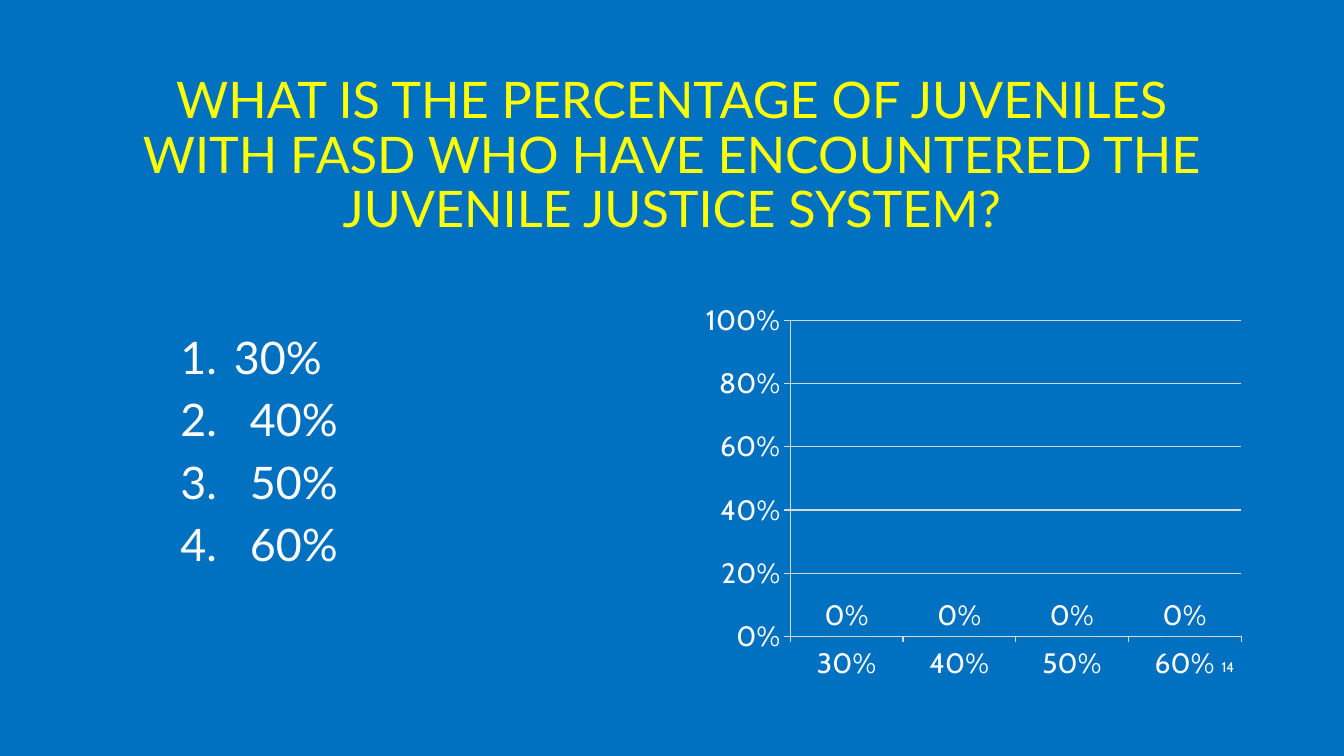
from dataclasses import dataclass

from lxml import etree
from pptx import Presentation
from pptx import util as u
from pptx.chart import data as cd
from pptx.dml import color
from pptx.enum import chart as ch, text
from pptx.oxml import ns

COLORS = {"background": "0070C0", "title": "FFFF00", "body": "FFFFFF",
          "bar": "9AC43E", "line": "D9D9D9"}
NUMBER_LEFT = 0.31


@dataclass
class Box:
    left: float
    top: float
    width: float
    height: float

    def lengths(self) -> list:
        return [u.Inches(v) for v in (self.left, self.top, self.width, self.height)]


@dataclass
class Style:
    size: int
    font: str
    color: str


@dataclass
class Answer:
    label: str
    margin: float
    number_font: str


TITLE = Style(36, "Lato", "title")
ANSWER = Style(32, "Lato", "body")
CHART = Style(20, "Cabin", "body")
PAGE = Style(10, "Cabin", "body")
ANSWERS = [Answer("30%", 0.84, "Cabin"), Answer("40%", 1, "Lato"),
           Answer("50%", 1, "Lato"), Answer("60%", 1, "Lato")]


def rgb(name: str) -> color.RGBColor:
    return color.RGBColor.from_string(COLORS[name])


def set_font(font, style: Style) -> None:
    font.size = u.Pt(style.size)
    font.name = style.font
    font.color.rgb = rgb(style.color)


def add_frame(s, box: Box, anchor):
    tf = s.shapes.add_textbox(*box.lengths()).text_frame
    tf.word_wrap = True
    tf.vertical_anchor = anchor
    return tf


def add_run(p, content: str, style: Style) -> None:
    r = p.add_run()
    r.text = content
    set_font(r.font, style)


def add_line(s, box: Box, content: str, style: Style, align) -> None:
    p = add_frame(s, box, text.MSO_ANCHOR.MIDDLE).paragraphs[0]
    p.alignment = align
    p.line_spacing = 0.9
    add_run(p, content, style)


def add_number(p, answer: Answer) -> None:
    pPr = p._p.get_or_add_pPr()
    pPr.set("marL", str(u.Inches(answer.margin)))
    pPr.set("indent", str(u.Inches(NUMBER_LEFT - answer.margin)))
    clr = etree.SubElement(pPr, ns.qn("a:buClr"))
    etree.SubElement(clr, ns.qn("a:srgbClr"), val=COLORS["body"])
    etree.SubElement(pPr, ns.qn("a:buFont"), typeface=answer.number_font)
    etree.SubElement(pPr, ns.qn("a:buAutoNum"), type="arabicPeriod")


def add_answers(s, box: Box, answers: list[Answer]) -> None:
    tf = add_frame(s, box, text.MSO_ANCHOR.TOP)
    for i, answer in enumerate(answers):
        p = tf.add_paragraph() if i else tf.paragraphs[0]
        add_number(p, answer)
        p.line_spacing = 0.9
        p.space_before = u.Pt(10 if i else 0)
        add_run(p, answer.label, ANSWER)


def set_plot_area(chart, area: Box) -> None:
    plot_area = chart._chartSpace.chart.plotArea
    for old in plot_area.findall(ns.qn("c:layout")):
        plot_area.remove(old)
    layout = etree.Element(ns.qn("c:layout"))
    manual = etree.SubElement(layout, ns.qn("c:manualLayout"))
    for tag, val in (("layoutTarget", "inner"), ("xMode", "edge"), ("yMode", "edge"),
                     ("x", area.left), ("y", area.top),
                     ("w", area.width), ("h", area.height)):
        etree.SubElement(manual, ns.qn(f"c:{tag}"), val=str(val))
    plot_area.insert(0, layout)


def add_results(s, box: Box, answers: list[Answer]) -> None:
    data = cd.CategoryChartData(number_format="0%")
    data.categories = [answer.label for answer in answers]
    data.add_series("Series 1", [0] * len(answers))
    chart = s.shapes.add_chart(ch.XL_CHART_TYPE.COLUMN_CLUSTERED,
                               *box.lengths(), data).chart
    chart.has_legend = False
    chart.has_title = False
    set_font(chart.font, CHART)
    set_plot_area(chart, Box(0.17, 0.064, 0.81, 0.804))

    plot = chart.plots[0]
    plot.gap_width = 150
    plot.vary_by_categories = False
    series = plot.series[0]
    series.format.fill.solid()
    series.format.fill.fore_color.rgb = rgb("bar")
    labels = series.data_labels
    labels.show_value = True
    labels.number_format = "0%"
    labels.number_format_is_linked = False
    labels.position = ch.XL_LABEL_POSITION.OUTSIDE_END
    set_font(labels.font, CHART)

    values = chart.value_axis
    values.minimum_scale, values.maximum_scale, values.major_unit = 0, 1, 0.2
    values.has_major_gridlines = True
    values.tick_labels.number_format = "0%"
    values.tick_labels.number_format_is_linked = False
    for axis in (chart.category_axis, values):
        axis.major_tick_mark = ch.XL_TICK_MARK.OUTSIDE
        set_font(axis.tick_labels.font, CHART)
    for part in (chart.category_axis, values, values.major_gridlines):
        part.format.line.color.rgb = rgb("line")
        part.format.line.width = u.Pt(0.75)


def main() -> None:
    prs = Presentation()
    prs.slide_width, prs.slide_height = u.Inches(13.33), u.Inches(7.5)
    s = prs.slides.add_slide(prs.slide_layouts[6])
    s.background.fill.solid()
    s.background.fill.fore_color.rgb = rgb("background")
    add_line(s, Box(1, 0.68, 11.33, 1.75),
             "WHAT IS THE PERCENTAGE OF JUVENILES WITH FASD WHO HAVE "
             "ENCOUNTERED THE JUVENILE JUSTICE SYSTEM?", TITLE, text.PP_ALIGN.CENTER)
    add_answers(s, Box(1.38, 3.28, 5.52, 3.9), ANSWERS)
    add_results(s, Box(6.9, 2.93, 5.52, 3.9), ANSWERS)
    add_line(s, Box(11.5, 6.43, 0.84, 0.4), "14", PAGE, text.PP_ALIGN.RIGHT)
    prs.save("out.pptx")


if __name__ == "__main__":
    main()
